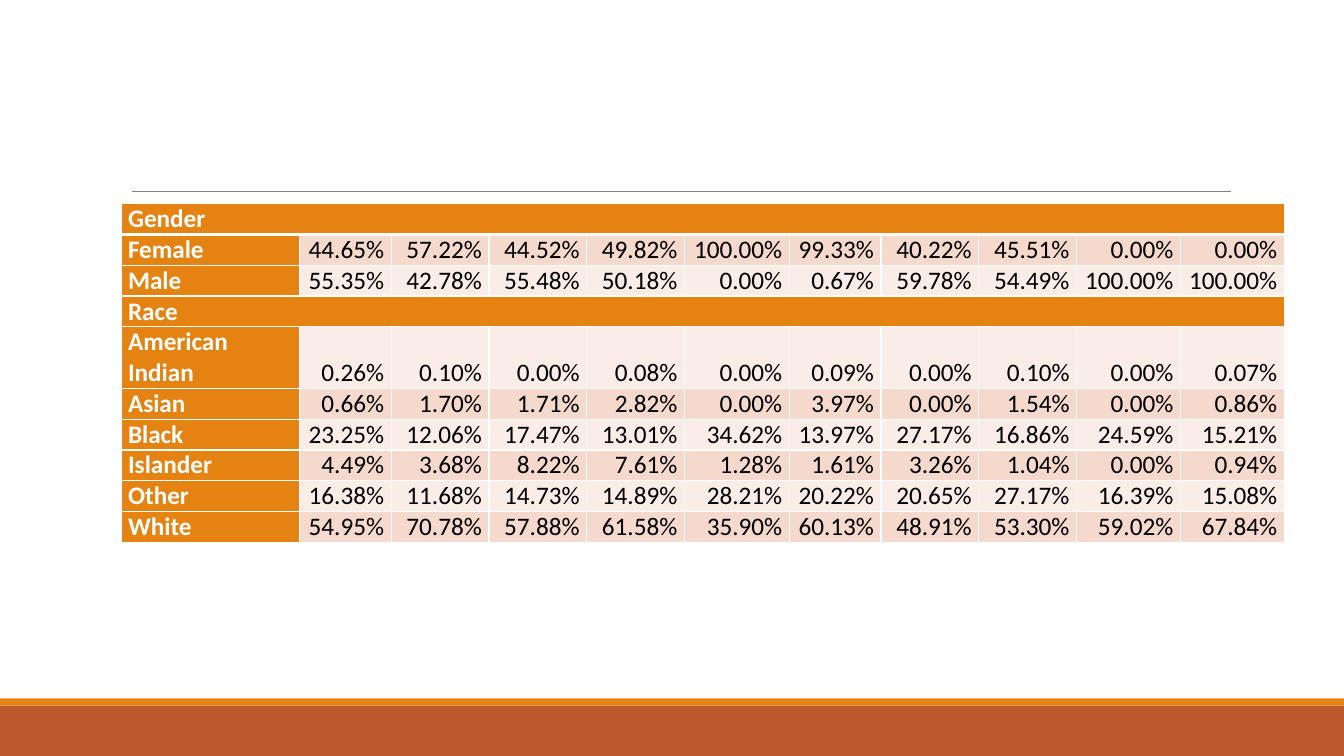
"""Build a slide with a table of gender and race shares."""
from dataclasses import dataclass

from lxml import etree
from pptx import Presentation
from pptx.dml.color import RGBColor
from pptx.enum.shapes import MSO_CONNECTOR, MSO_SHAPE
from pptx.enum.text import MSO_ANCHOR, PP_ALIGN
from pptx.oxml.ns import qn
from pptx.util import Inches, Pt

RECT = MSO_SHAPE.RECTANGLE
STRAIGHT = MSO_CONNECTOR.STRAIGHT
BOTTOM = MSO_ANCHOR.BOTTOM
LEFT, RIGHT = PP_ALIGN.LEFT, PP_ALIGN.RIGHT

ROWS = [
    ("Gender", ""),
    ("Female", "44.65 57.22 44.52 49.82 100.00 99.33 40.22 45.51 0.00 0.00"),
    ("Male", "55.35 42.78 55.48 50.18 0.00 0.67 59.78 54.49 100.00 100.00"),
    ("Race", ""),
    ("American Indian", "0.26 0.10 0.00 0.08 0.00 0.09 0.00 0.10 0.00 0.07"),
    ("Asian", "0.66 1.70 1.71 2.82 0.00 3.97 0.00 1.54 0.00 0.86"),
    ("Black", "23.25 12.06 17.47 13.01 34.62 13.97 27.17 16.86 24.59 15.21"),
    ("Islander", "4.49 3.68 8.22 7.61 1.28 1.61 3.26 1.04 0.00 0.94"),
    ("Other", "16.38 11.68 14.73 14.89 28.21 20.22 20.65 27.17 16.39 15.08"),
    ("White", "54.95 70.78 57.88 61.58 35.90 60.13 48.91 53.30 59.02 67.84"),
]
COL_WIDTHS = [1.77, 0.91, 0.97, 0.97, 0.97, 1.04, 0.91, 0.97, 0.97, 1.03, 1.03]
ROW_HEIGHT = 0.2
TABLE_LEFT, TABLE_TOP = 1.2, 2.02
SLIDE_W, SLIDE_H = 13.33, 7.5
FOOTER_H, STRIPE_H = 0.5, 0.07
RULE_LEFT, RULE_RIGHT, RULE_Y = 1.31, 12.21, 1.9


@dataclass(frozen=True)
class Theme:
    font: str = "Calibri"
    size: int = 18
    accent: str = "E48312"
    footer: str = "BD582C"
    rule: str = "808080"
    light: str = "FFFFFF"
    dark: str = "000000"
    bands: tuple = ("FAEDE7", "F5D9CC")
    rule_width: float = 0.5
    grid_width: int = 1
    header_width: int = 3


THEME = Theme()


def add_bar(s, top, height, color):
    bar = s.shapes.add_shape(RECT, 0, Inches(top), Inches(SLIDE_W), Inches(height))
    bar.shadow.inherit = False
    bar.fill.solid()
    bar.fill.fore_color.rgb = RGBColor.from_string(color)
    bar.line.fill.background()


def add_rule(s):
    y = Inches(RULE_Y)
    rule = s.shapes.add_connector(STRAIGHT, Inches(RULE_LEFT), y, Inches(RULE_RIGHT), y)
    rule.line.color.rgb = RGBColor.from_string(THEME.rule)
    rule.line.width = Pt(THEME.rule_width)
    etree.SubElement(rule._element.spPr, qn("a:effectLst"))


def set_borders(cell, top, bottom):
    tcPr = cell._tc.get_or_add_tcPr()
    widths = {"lnL": THEME.grid_width, "lnR": THEME.grid_width, "lnT": top, "lnB": bottom}
    for side, width in widths.items():
        ln = etree.SubElement(tcPr, qn(f"a:{side}"), w=str(Pt(width)))
        fill = etree.SubElement(ln, qn("a:solidFill"))
        etree.SubElement(fill, qn("a:srgbClr"), val=THEME.light)


def style_cell(cell, row, fill):
    top = THEME.header_width if row == 1 else THEME.grid_width
    bottom = THEME.header_width if row == 0 else THEME.grid_width
    set_borders(cell, top, bottom)
    cell.fill.solid()
    cell.fill.fore_color.rgb = RGBColor.from_string(fill)
    cell.margin_left = cell.margin_right = Inches(0.07)
    cell.margin_top = cell.margin_bottom = 0
    cell.vertical_anchor = BOTTOM


def write(cell, text, is_label):
    p = cell.text_frame.paragraphs[0]
    p.alignment = LEFT if is_label else RIGHT
    r = p.add_run()
    r.text = text
    r.font.name = THEME.font
    r.font.size = Pt(THEME.size)
    r.font.bold = is_label
    r.font.color.rgb = RGBColor.from_string(THEME.light if is_label else THEME.dark)


def add_shares_table(s):
    n = len(COL_WIDTHS)
    frame = s.shapes.add_table(
        len(ROWS), n, Inches(TABLE_LEFT), Inches(TABLE_TOP),
        Inches(sum(COL_WIDTHS)), Inches(ROW_HEIGHT * len(ROWS)))
    table = frame.table
    for column, width in zip(table.columns, COL_WIDTHS):
        column.width = Inches(width)
    for i, (label, shares) in enumerate(ROWS):
        table.rows[i].height = Inches(ROW_HEIGHT)
        for j in range(n):
            is_accent = j == 0 or not shares
            style_cell(table.cell(i, j), i, THEME.accent if is_accent else THEME.bands[i % 2])
        write(table.cell(i, 0), label, True)
        for j, share in enumerate(shares.split(), 1):
            write(table.cell(i, j), f"{share}%", False)
        if not shares:
            table.cell(i, 0).merge(table.cell(i, n - 1))


def main():
    prs = Presentation()
    prs.slide_width, prs.slide_height = Inches(SLIDE_W), Inches(SLIDE_H)
    s = prs.slides.add_slide(prs.slide_layouts[6])
    footer_top = SLIDE_H - FOOTER_H
    add_bar(s, footer_top, FOOTER_H, THEME.footer)
    add_bar(s, footer_top - STRIPE_H, STRIPE_H, THEME.accent)
    add_rule(s)
    add_shares_table(s)
    prs.save("out.pptx")


if __name__ == "__main__":
    main()
